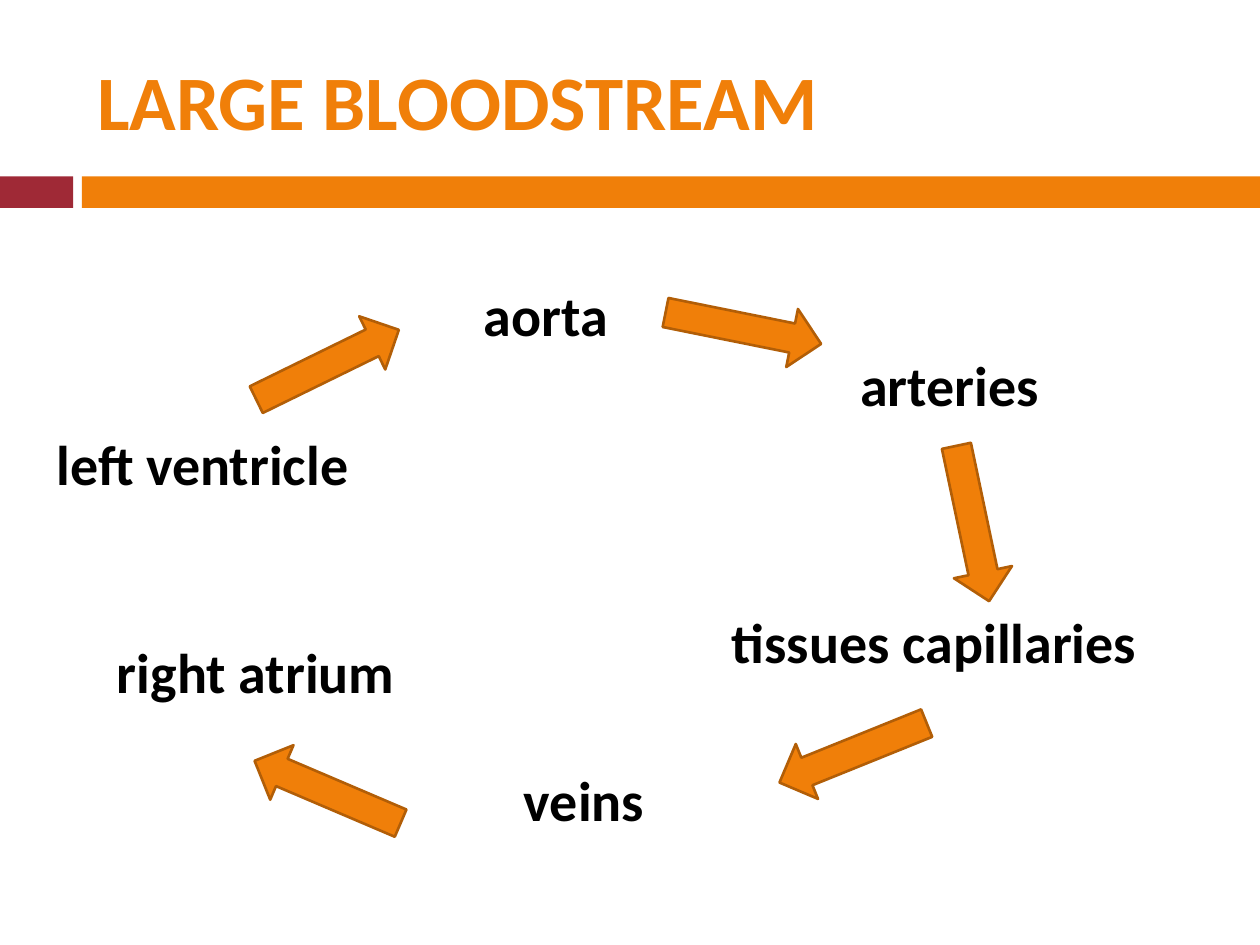
import dataclasses

import pptx
import pptx.dml.color
import pptx.enum.shapes
import pptx.enum.text
import pptx.util
from pptx.util import Inches


@dataclasses.dataclass(frozen=True)
class Theme:
    font: str = "Calibri"
    title_size: int = 44
    label_size: int = 32
    orange: str = "F07F09"
    outline: str = "B25E07"
    red: str = "9F2936"
    black: str = "000000"


THEME = Theme()
ARROW_WIDTH, ARROW_HEIGHT = 1.26, 0.47
BAND_TOP, BAND_HEIGHT = 1.4, 0.25

STATIONS = [
    ("left ventricle", 0.35, 3.36, 2.84),
    ("aorta", 3.74, 2.18, 1.3),
    ("arteries", 6.73, 2.73, 1.82),
    ("tissues capillaries", 5.71, 4.77, 4.06),
    ("veins", 4.06, 6.03, 1.35),
    ("right atrium", 0.83, 5.01, 2.69),
]
ARROWS = [
    (1.97, 2.66, 333.9),
    (5.27, 2.37, 11.4),
    (7.09, 3.92, 78.1),
    (6.14, 5.74, 158),
    (1.97, 6.05, 203.1),
]


def color(value):
    return pptx.dml.color.RGBColor.from_string(value)


def write_text(frame, text, *, size, fill, bold=True):
    para = frame.paragraphs[0]
    para.alignment = pptx.enum.text.PP_ALIGN.LEFT
    span = para.add_run()
    span.text = text
    span.font.name = THEME.font
    span.font.size = pptx.util.Pt(size)
    span.font.bold = bold
    span.font.color.rgb = color(fill)


def add_filled_shape(page, kind, left, top, width, height, fill):
    shape = page.shapes.add_shape(
        kind, Inches(left), Inches(top), Inches(width), Inches(height))
    shape.shadow.inherit = False
    shape.fill.solid()
    shape.fill.fore_color.rgb = color(fill)
    shape.line.fill.background()
    return shape


def add_band(page, left, width, fill):
    add_filled_shape(page, pptx.enum.shapes.MSO_SHAPE.RECTANGLE,
                     left, BAND_TOP, width, BAND_HEIGHT, fill)


def set_title(page, text):
    box = page.shapes.title
    box.left, box.top = Inches(0.67), Inches(0.25)
    box.width, box.height = Inches(8.92), Inches(1.08)
    box.text_frame.vertical_anchor = pptx.enum.text.MSO_ANCHOR.MIDDLE
    write_text(box.text_frame, text, size=THEME.title_size, fill=THEME.orange)


def add_station(page, text, left, top, width):
    box = page.shapes.add_textbox(
        Inches(left), Inches(top), Inches(width), Inches(0.64))
    box.text_frame.word_wrap = False
    box.text_frame.auto_size = pptx.enum.text.MSO_AUTO_SIZE.SHAPE_TO_FIT_TEXT
    write_text(box.text_frame, text, size=THEME.label_size, fill=THEME.black)


def add_arrow(page, left, top, rotation):
    arrow = add_filled_shape(page, pptx.enum.shapes.MSO_SHAPE.RIGHT_ARROW,
                             left, top, ARROW_WIDTH, ARROW_HEIGHT, THEME.orange)
    arrow.rotation = rotation
    arrow.line.color.rgb = color(THEME.outline)
    arrow.line.width = pptx.util.Pt(1.5)


def main():
    deck = pptx.Presentation()
    deck.slide_width, deck.slide_height = Inches(10), Inches(7.5)
    page = deck.slides.add_slide(deck.slide_layouts.get_by_name("Title Only"))
    add_band(page, 0, 0.58, THEME.red)
    add_band(page, 0.65, 9.35, THEME.orange)
    set_title(page, "LARGE BLOODSTREAM")
    for station in STATIONS:
        add_station(page, *station)
    for arrow in ARROWS:
        add_arrow(page, *arrow)
    deck.save("out.pptx")


if __name__ == "__main__":
    main()
